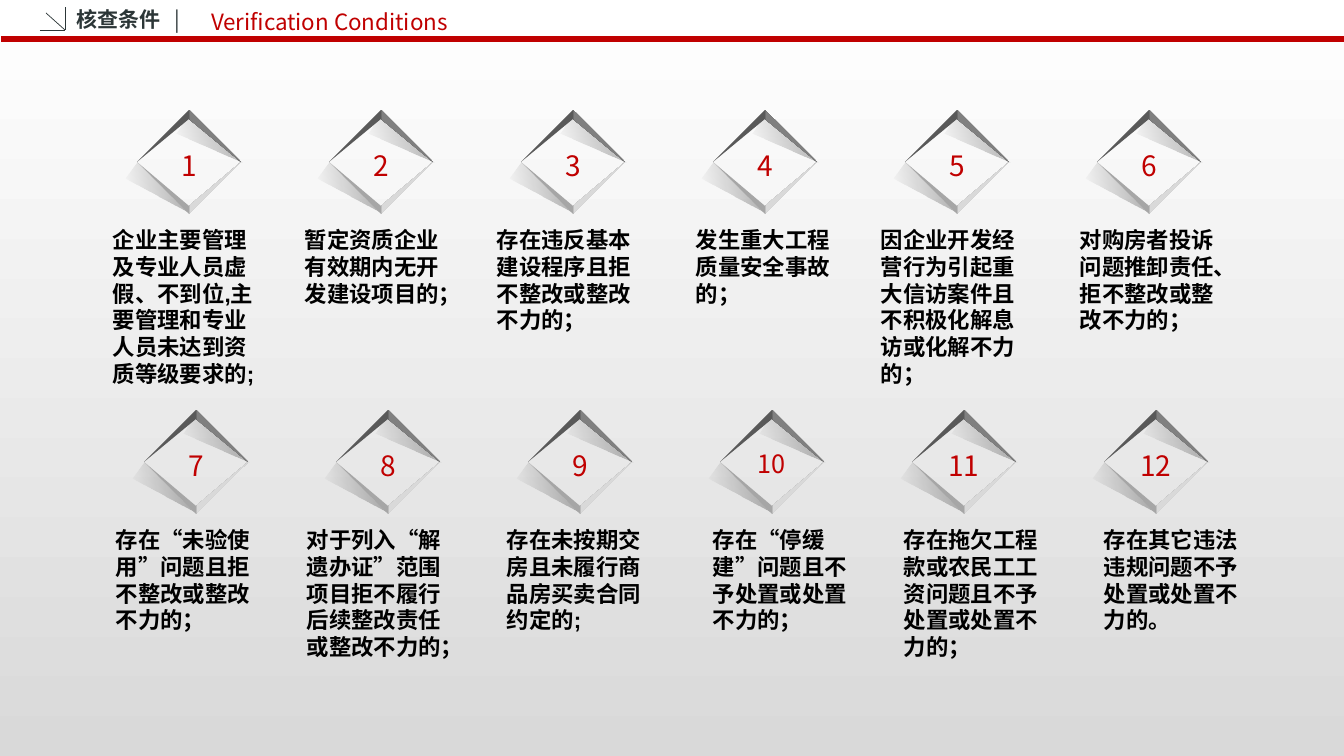
"""Builds the slide of twelve verification conditions."""
from lxml.etree import SubElement
from pptx import Presentation
from pptx.dml.color import RGBColor
from pptx.enum.shapes import MSO_CONNECTOR, MSO_SHAPE
from pptx.enum.text import MSO_ANCHOR, MSO_AUTO_SIZE, PP_ALIGN
from pptx.oxml.ns import qn
from pptx.util import Pt

HEADING = [("核查条件\t", True), ("|", False)]
SUBTITLE = "Verification Conditions"
# each condition: left edge, line count, wording
ROWS = [
    [
        (103, 6, "企业主要管理及专业人员虚假、不到位,主要管理和专业人员未达到资质等级要求的;"),
        (295, 3, "暂定资质企业有效期内无开发建设项目的；"),
        (487, 4, "存在违反基本建设程序且拒不整改或整改不力的；"),
        (686, 3, "发生重大工程质量安全事故的；"),
        (871, 6, "因企业开发经营行为引起重大信访案件且不积极化解息访或化解不力的；"),
        (1070, 4, "对购房者投诉问题推卸责任、拒不整改或整改不力的；"),
    ],
    [
        (106, 4, "存在“未验使用”问题且拒不整改或整改不力的；"),
        (297, 5, "对于列入“解遗办证”范围项目拒不履行后续整改责任或整改不力的；"),
        (497, 4, "存在未按期交房且未履行商品房买卖合同约定的;"),
        (703, 4, "存在“停缓建”问题且不予处置或处置不力的；"),
        (894, 5, "存在拖欠工程款或农民工工资问题且不予处置或处置不力的；"),
        (1094, 4, "存在其它违法违规问题不予处置或处置不力的。"),
    ],
]
ROW_CENTRES = [(189, 162), (196, 462)]
PITCH = 192
RADIUS = 52
NUMBER_SIZES = {10: 18}
CORNER_ARROW = [(40, 30, 65, 30), (65, 30, 65, 7), (65, 30, 46, 13)]
SHADOWS = [(13, -54, 121.6), (-39, -6, 126.7)]
FOLDS = [(-52, -43, "fold_dark", "fold_grey"), (52, 44, "edge_grey", "edge_light")]
COLORS = {
    "red": "C00000", "slate": "2C3637", "black": "000000", "white": "FFFFFF",
    "fold_dark": "595959", "fold_grey": "808080",
    "edge_grey": "A6A6A6", "edge_light": "D9D9D9",
}
CJK, LATIN = "Noto Sans CJK SC", "Arial"


def px(length):
    return round(length * 914400 / 100.8)


def rgb(name):
    return RGBColor.from_string(COLORS[name])


def add_text(parent, box, text, size=16, color="black", font=CJK, bold=False,
             align=PP_ALIGN.LEFT, anchor=MSO_ANCHOR.TOP, insets=(10, 5), grow=True, tab=None):
    frame = parent.add_textbox(*map(px, box)).text_frame
    frame.word_wrap = True
    frame.auto_size = MSO_AUTO_SIZE.SHAPE_TO_FIT_TEXT if grow else MSO_AUTO_SIZE.NONE
    frame.vertical_anchor = anchor
    frame.margin_left = frame.margin_right = px(insets[0])
    frame.margin_top = frame.margin_bottom = px(insets[1])
    paragraph = frame.paragraphs[0]
    paragraph.alignment = align
    if tab:
        tabs = SubElement(paragraph._p.get_or_add_pPr(), qn("a:tabLst"))
        SubElement(tabs, qn("a:tab"), pos=str(px(tab)), algn="l")
    for words, heavy in [(text, bold)] if isinstance(text, str) else text:
        run = paragraph.add_run()
        run.text = words
        run.font.size, run.font.bold, run.font.name = Pt(size), heavy, font
        run.font.color.rgb = rgb(color)
        SubElement(run._r.get_or_add_rPr(), qn("a:ea"), typeface=CJK)


def add_line(parent, ends, color, width):
    line = parent.add_connector(MSO_CONNECTOR.STRAIGHT, *map(px, ends))
    line.line.color.rgb = rgb(color)
    line.line.width = Pt(width)
    SubElement(line._element.spPr, qn("a:effectLst"))


def set_gradient(fill, stops, angle):
    fill.gradient()
    fill.gradient_angle = angle
    for stop, (position, color) in zip(fill.gradient_stops, stops):
        stop.position = position
        stop.color.rgb = rgb(color)


def style_facet(facet, stops, angle):
    set_gradient(facet.fill, stops, angle)
    facet.line.fill.background()
    facet.shadow.inherit = False


def add_diamond(parent, cx, cy, number):
    for dx, dy, turn in SHADOWS:
        shadow = parent.add_shape(MSO_SHAPE.ISOSCELES_TRIANGLE,
                                  *map(px, (cx + dx, cy + dy, 20, 71)))
        shadow.rotation = turn
        style_facet(shadow, [(0, "black"), (1, "black")], 315)
        stop_colors = shadow._element.spPr.iter(qn("a:srgbClr"))
        for stop_color, alpha in zip(list(stop_colors), ("31000", "0")):
            SubElement(stop_color, qn("a:alpha"), val=alpha)
    for tip, notch, left, right in FOLDS:
        outline = parent.build_freeform(px(cx), px(cy + tip))
        corners = [(cx + RADIUS, cy), (cx, cy + notch), (cx - RADIUS, cy)]
        outline.add_line_segments([(px(x), px(y)) for x, y in corners], close=True)
        style_facet(outline.convert_to_shape(), [(0.5, left), (0.51, right)], 0)
    width = 36 if number < 10 else 60
    add_text(parent, (cx - width / 2, cy - 19, width, 44), str(number),
             size=NUMBER_SIZES.get(number, 20), color="red", align=PP_ALIGN.CENTER)


def main():
    deck = Presentation()
    deck.slide_width, deck.slide_height = px(1344), px(756)
    slide = deck.slides.add_slide(deck.slide_layouts[6])
    shapes = slide.shapes
    set_gradient(slide.background.fill, [(0, "white"), (1, "edge_light")], 270)

    add_text(shapes, (70, 3, 553, 33), HEADING, size=15, color="slate",
             anchor=MSO_ANCHOR.MIDDLE, insets=(7, 4), grow=False, tab=98)
    add_line(shapes, (1, 39, 1344, 39), "red", 4.5)
    corner = shapes.add_group_shape().shapes
    for ends in CORNER_ARROW:
        add_line(corner, ends, "slate", 0.5)
    add_text(shapes, (211, 8, 418, 27), SUBTITLE, color="red", insets=(0, 0))

    number = 0
    for (first_x, cy), conditions in zip(ROW_CENTRES, ROWS):
        for column, (left, lines, wording) in enumerate(conditions):
            number += 1
            add_diamond(shapes.add_group_shape().shapes, first_x + column * PITCH, cy, number)
            add_text(shapes, (left, cy + 59, 170, 27 * lines + 11), wording,
                     font=LATIN, bold=True)
    deck.save("out.pptx")


if __name__ == "__main__":
    main()
